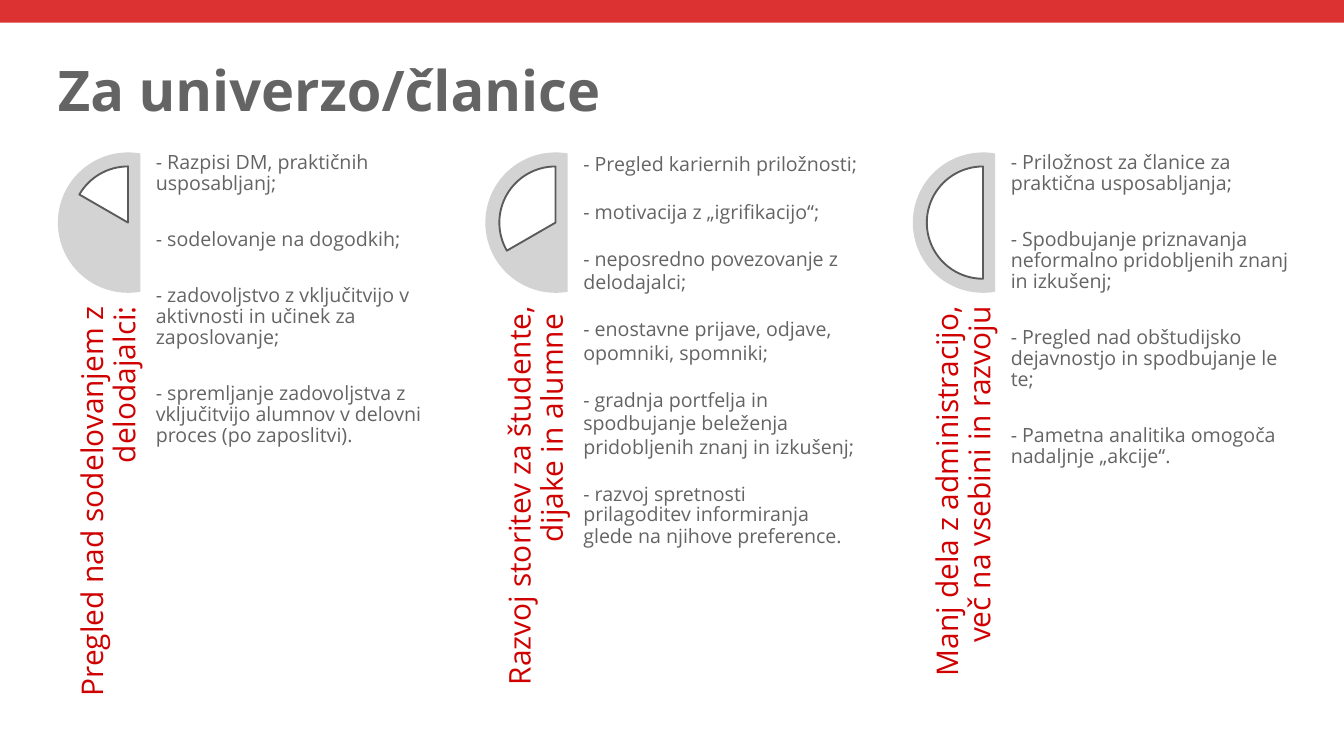
from pptx import Presentation
from pptx.dml.color import RGBColor
from pptx.enum.shapes import MSO_SHAPE
from pptx.enum.text import MSO_ANCHOR, PP_ALIGN
from pptx.util import Pt

RECT, CHORD, PIE = MSO_SHAPE.RECTANGLE, MSO_SHAPE.CHORD, MSO_SHAPE.PIE
LEFT, RIGHT = PP_ALIGN.LEFT, PP_ALIGN.RIGHT
TOP, BOTTOM = MSO_ANCHOR.TOP, MSO_ANCHOR.BOTTOM

BAR_RED = RGBColor(0xDC, 0x32, 0x32)
HEAD_RED = RGBColor(0xD0, 0x00, 0x00)
TEXT_GREY = RGBColor(0x64, 0x64, 0x64)
DISC_GREY = RGBColor(0xD3, 0xD3, 0xD3)
LINE_GREY = RGBColor(0x5B, 0x5B, 0x5B)
WHITE = RGBColor(0xFF, 0xFF, 0xFF)

prs = Presentation()
prs.slide_width, prs.slide_height = Pt(1440), Pt(809.28)
s = prs.slides.add_slide(prs.slide_layouts[6])


def add_text(paras, x, y, w, h, size, color=TEXT_GREY, bold=False,
             align=LEFT, anchor=TOP, rotation=0):
    """Each paragraph is (text, line spacing, points after)."""
    sp = s.shapes.add_textbox(Pt(x), Pt(y), Pt(w), Pt(h))
    sp.rotation = rotation
    tf = sp.text_frame
    tf.word_wrap = True
    tf.vertical_anchor = anchor
    tf.margin_left = tf.margin_right = tf.margin_top = tf.margin_bottom = 0
    for i, (text, spacing, after) in enumerate(paras):
        p = tf.add_paragraph() if i else tf.paragraphs[0]
        p.alignment = align
        p.line_spacing = spacing
        p.space_after = Pt(after)
        r = p.add_run()
        r.text = text
        r.font.name, r.font.size, r.font.bold = "Open Sans", Pt(size), bold
        r.font.color.rgb = color


def add_shape(kind, x, y, w, h, fill, line=None, angles=()):
    """Angles are in degrees, clockwise from the right."""
    sp = s.shapes.add_shape(kind, Pt(x), Pt(y), Pt(w), Pt(h))
    sp.shadow.inherit = False
    sp.fill.solid()
    sp.fill.fore_color.rgb = fill
    if line:
        sp.line.color.rgb = line
        sp.line.width = Pt(2)
    else:
        sp.line.fill.background()
    for i, angle in enumerate(angles):
        sp.adjustments[i] = angle * 0.6


# Top bar and title
add_shape(RECT, -11.5, -9.4, 1468.8, 33.8, BAR_RED)
add_text([("Za univerzo/članice", 1.0, 0)], 62, 59.8, 1321, 72.7, 60, bold=True)

# Columns: heading, start angle of the pie, body paragraphs
WIDE, NARROW = 37.2, 25.2
columns = [
    ("Pregled nad sodelovanjem z delodajalci:", 210, [
        ("- Razpisi DM, praktičnih usposabljanj;", 0.9, WIDE),
        ("- sodelovanje na dogodkih;", 0.9, WIDE),
        ("- zadovoljstvo z vključitvijo v aktivnosti in učinek za zaposlovanje;", 0.9, WIDE),
        ("- spremljanje zadovoljstva z vključitvijo alumnov v delovni proces (po zaposlitvi).", 0.9, 0),
    ]),
    ("Razvoj storitev za študente, dijake in alumne ", 150, [
        ("- Pregled kariernih priložnosti;", 1.0, NARROW),
        ("- motivacija z „igrifikacijo“;", 1.0, NARROW),
        ("- neposredno povezovanje z delodajalci;", 1.0, NARROW),
        ("- enostavne prijave, odjave, opomniki, spomniki;", 1.0, NARROW),
        ("- gradnja portfelja in spodbujanje beleženja pridobljenih znanj in izkušenj;", 1.0, NARROW),
        ("- razvoj spretnosti", 1.0, 0),
        ("prilagoditev informiranja glede na njihove preference.", 0.9, 0),
    ]),
    ("Manj dela z administracijo, več na vsebini in razvoju", 90, [
        ("- Priložnost za članice za praktična usposabljanja;", 0.9, WIDE),
        ("- Spodbujanje priznavanja neformalno pridobljenih znanj in izkušenj;", 0.9, WIDE),
        ("- Pregled nad obštudijsko dejavnostjo in spodbujanje le te;", 0.9, WIDE),
        ("- Pametna analitika omogoča nadaljnje „akcije“.", 0.9, 0),
    ]),
]

for i, (heading, start, body) in enumerate(columns):
    x = 62 + i * 458
    add_shape(CHORD, x, 163.4, 150.5, 150.5, DISC_GREY, angles=(80, 280))
    add_shape(PIE, x + 15, 178.4, 120.4, 120.4, WHITE, LINE_GREY, (start, 270))
    add_text([(heading, 0.9, 0)], x - 172.8, 501, 435.6, 90, 32, HEAD_RED,
             align=RIGHT, anchor=BOTTOM, rotation=270)
    add_text(body, x + 105, 163.4, 300.2, 600.5, 21)

prs.save("out.pptx")
